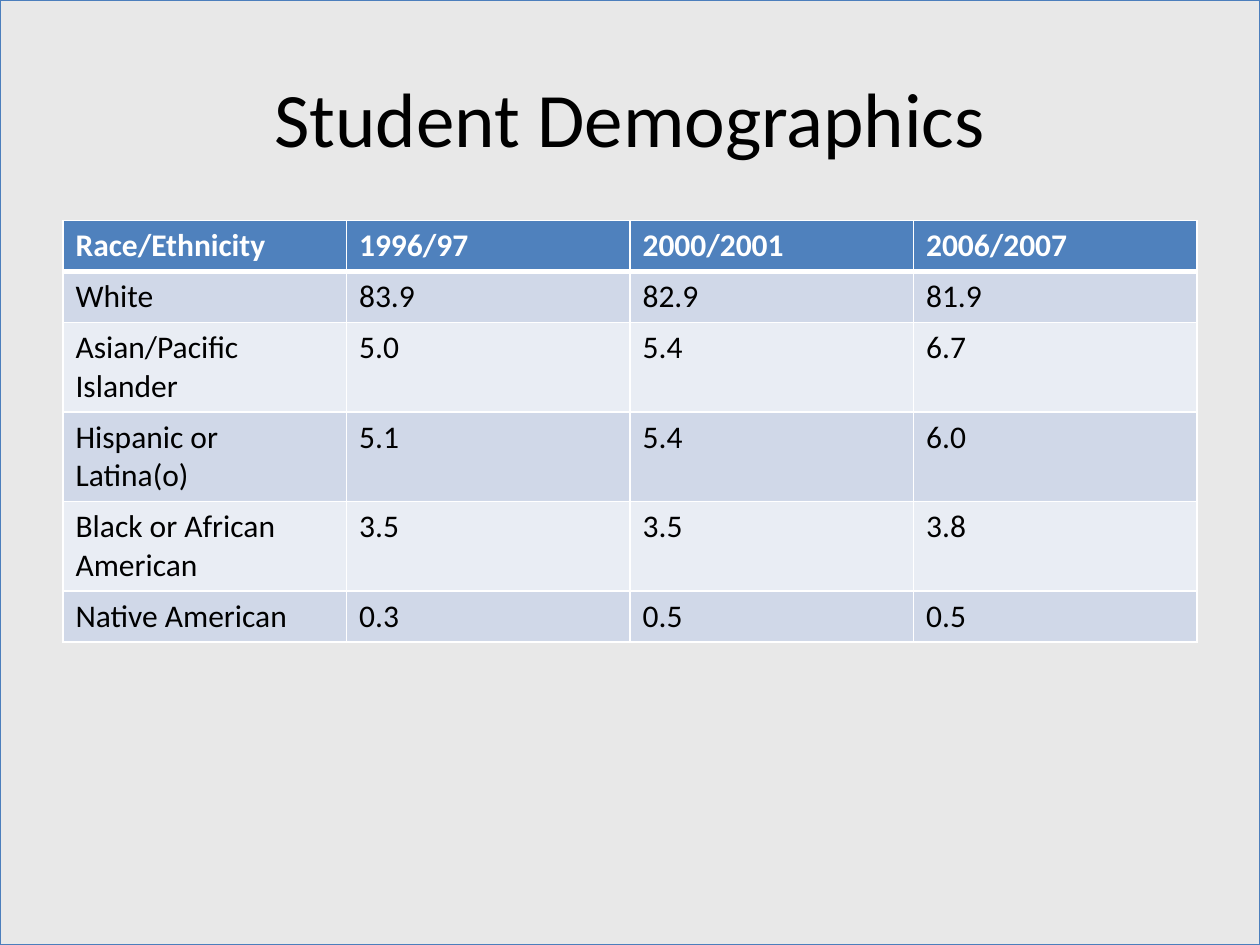
from dataclasses import dataclass

import lxml.etree
import pptx
import pptx.dml.color
import pptx.enum.shapes
import pptx.enum.text
import pptx.oxml.ns
import pptx.util

Cm = pptx.util.Cm
Pt = pptx.util.Pt
RGBColor = pptx.dml.color.RGBColor

FONT = "Calibri"
BLACK = RGBColor(0x00, 0x00, 0x00)
WHITE = RGBColor(0xFF, 0xFF, 0xFF)
PANEL_GREY = RGBColor(0xE8, 0xE8, 0xE8)
PANEL_LINE = RGBColor(0x4B, 0x7E, 0xBC)
HEADER_BLUE = RGBColor(0x4F, 0x81, 0xBD)
BAND_DARK = RGBColor(0xD0, 0xD8, 0xE8)
BAND_LIGHT = RGBColor(0xE9, 0xED, 0xF4)

MARGIN = Cm(1.27)
CONTENT_WIDTH = Cm(22.86)
TABLE_TOP = Cm(4.44)
ROW_HEIGHT = Cm(1.03)

HEADINGS = ("Race/Ethnicity", "1996/97", "2000/2001", "2006/2007")


@dataclass(frozen=True)
class Group:
    name: str
    shares: tuple[str, str, str]


@dataclass(frozen=True)
class CellStyle:
    fill: RGBColor
    text: RGBColor
    bold: bool = False
    top_border: float = 1
    bottom_border: float = 1


GROUPS = (
    Group("White", ("83.9", "82.9", "81.9")),
    Group("Asian/Pacific Islander", ("5.0", "5.4", "6.7")),
    Group("Hispanic or Latina(o)", ("5.1", "5.4", "6.0")),
    Group("Black or African American", ("3.5", "3.5", "3.8")),
    Group("Native American", ("0.3", "0.5", "0.5")),
)


def add_run(paragraph, text: str, size: float, color: RGBColor, bold: bool = False) -> None:
    run = paragraph.add_run()
    run.text = text
    run.font.name = FONT
    run.font.size = Pt(size)
    run.font.bold = bold
    run.font.color.rgb = color


def add_layout_panel(slide, width: int, height: int) -> None:
    """Put an outlined grey panel on the slide's layout, behind its placeholders."""
    panel = slide.shapes.add_shape(
        pptx.enum.shapes.MSO_SHAPE.RECTANGLE, 0, 0, width, height
    )
    panel.shadow.inherit = False
    panel.fill.solid()
    panel.fill.fore_color.rgb = PANEL_GREY
    panel.line.color.rgb = PANEL_LINE
    panel.line.width = Pt(0.75)

    layout_shapes = list(slide.slide_layout.shapes)
    free_id = max(shape.shape_id for shape in layout_shapes) + 1
    panel.element.nvSpPr.cNvPr.set("id", str(free_id))
    layout_shapes[0].element.addprevious(panel.element)


def set_title(slide, text: str) -> None:
    title = slide.shapes.title
    title.left, title.top = MARGIN, Cm(0.76)
    title.width, title.height = CONTENT_WIDTH, Cm(3.18)
    title.text_frame.vertical_anchor = pptx.enum.text.MSO_ANCHOR.MIDDLE
    paragraph = title.text_frame.paragraphs[0]
    paragraph.alignment = pptx.enum.text.PP_ALIGN.CENTER
    add_run(paragraph, text, 44, BLACK)


def add_border(cell, side: str, points: float) -> None:
    qn = pptx.oxml.ns.qn
    properties = cell._tc.get_or_add_tcPr()
    line = lxml.etree.SubElement(properties, qn(f"a:ln{side}"), w=str(Pt(points)))
    fill = lxml.etree.SubElement(line, qn("a:solidFill"))
    lxml.etree.SubElement(fill, qn("a:srgbClr"), val=str(WHITE))


def fill_cell(cell, text: str, style: CellStyle) -> None:
    borders = {"L": 1, "R": 1, "T": style.top_border, "B": style.bottom_border}
    for side, points in borders.items():
        add_border(cell, side, points)
    cell.fill.solid()
    cell.fill.fore_color.rgb = style.fill
    add_run(cell.text_frame.paragraphs[0], text, 18, style.text, style.bold)


def row_style(row: int) -> CellStyle:
    if row == 0:
        return CellStyle(HEADER_BLUE, WHITE, bold=True, bottom_border=3)
    band = BAND_DARK if row % 2 else BAND_LIGHT
    return CellStyle(band, BLACK, top_border=3 if row == 1 else 1)


def add_demographics_table(slide) -> None:
    rows = [HEADINGS] + [(group.name, *group.shares) for group in GROUPS]
    table = slide.shapes.add_table(
        len(rows), len(HEADINGS), MARGIN, TABLE_TOP,
        CONTENT_WIDTH, ROW_HEIGHT * len(rows),
    ).table
    for row, texts in enumerate(rows):
        for column, text in enumerate(texts):
            fill_cell(table.cell(row, column), text, row_style(row))


def main() -> None:
    presentation = pptx.Presentation()
    presentation.slide_width = Cm(25.4)
    presentation.slide_height = Cm(19.05)
    slide = presentation.slides.add_slide(presentation.slide_layouts[5])
    add_layout_panel(slide, presentation.slide_width, presentation.slide_height)
    set_title(slide, "Student Demographics")
    add_demographics_table(slide)
    presentation.save("out.pptx")


if __name__ == "__main__":
    main()
